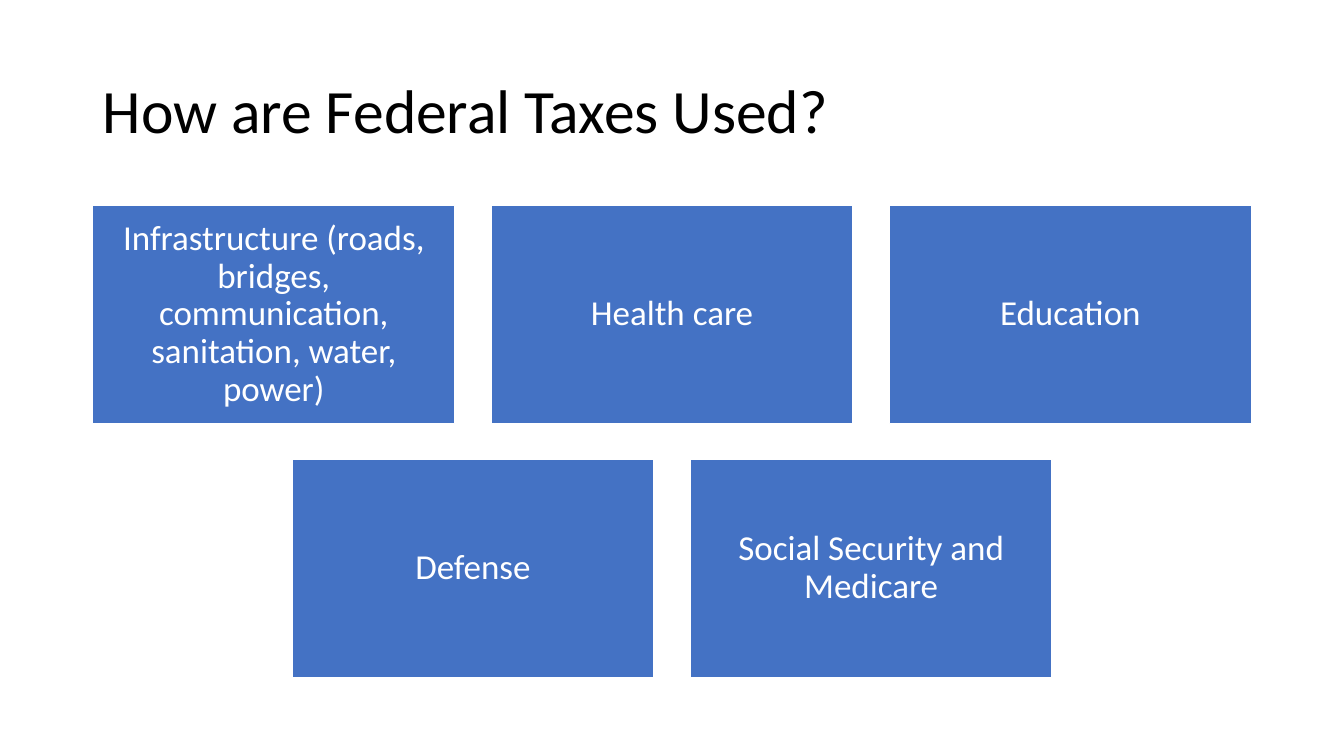
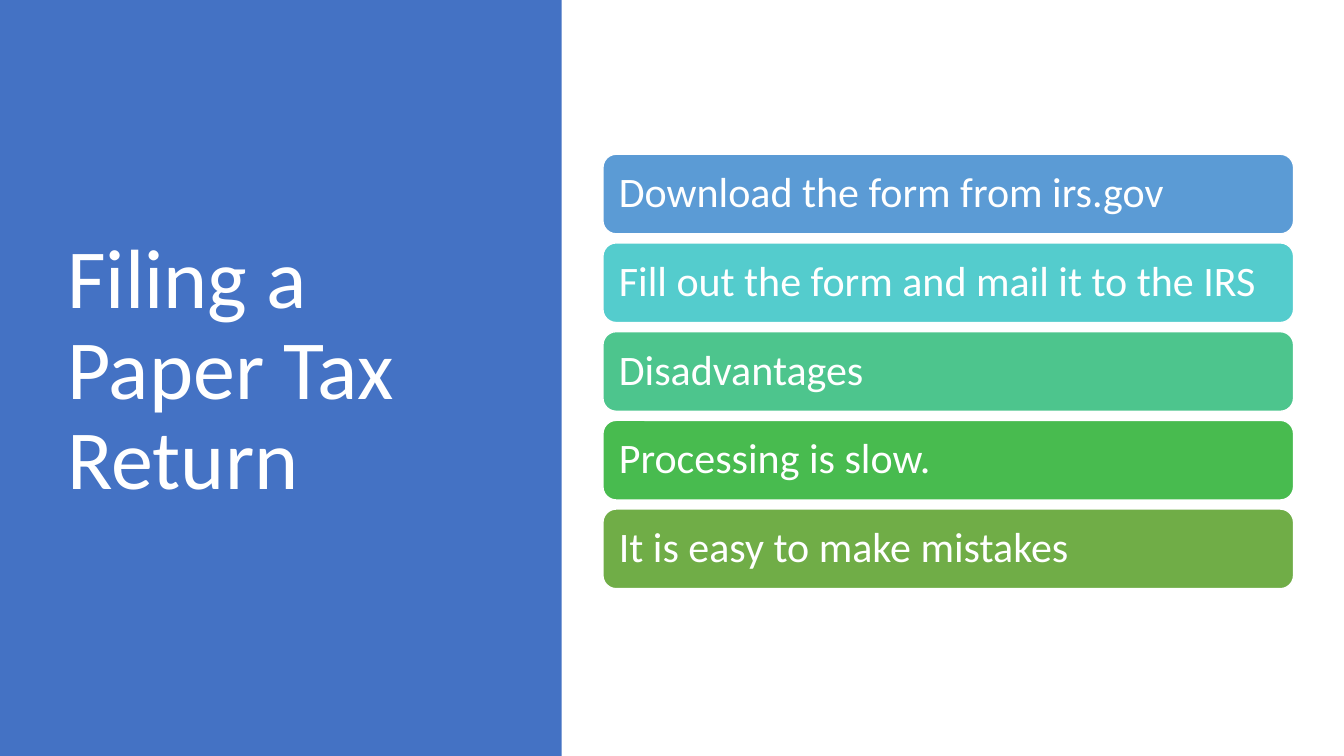
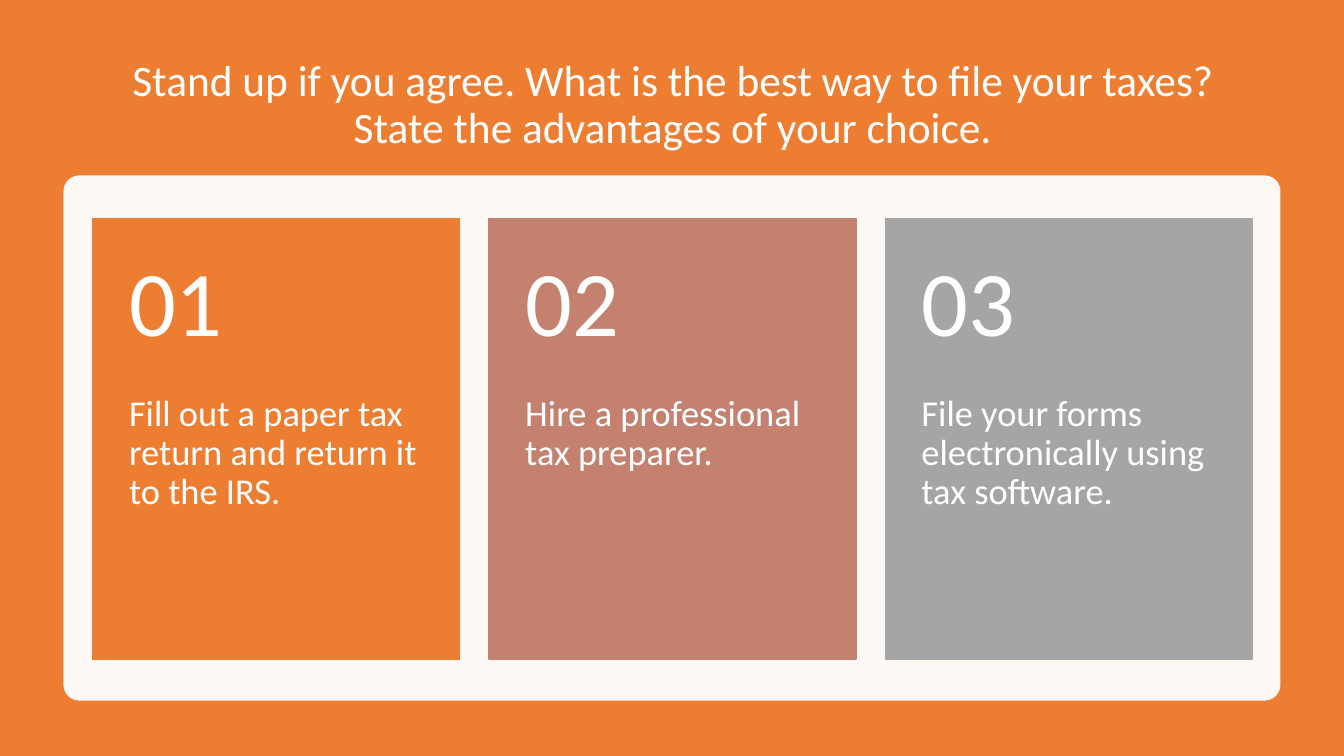
import pptx
import pptx.util
import pptx.dml.color
import pptx.enum.shapes
import pptx.enum.text
import pptx.oxml.ns
import lxml.etree

Inches = pptx.util.Inches
RGBColor = pptx.dml.color.RGBColor
SHAPE = pptx.enum.shapes.MSO_SHAPE
ALIGN = pptx.enum.text.PP_ALIGN
ANCHOR = pptx.enum.text.MSO_ANCHOR

WHITE = RGBColor(0xFF, 0xFF, 0xFF)
BLACK = RGBColor(0x00, 0x00, 0x00)
BLUE = RGBColor(0x44, 0x72, 0xC4)
SKY = RGBColor(0x5B, 0x9B, 0xD5)
TURQUOISE = RGBColor(0x54, 0xCC, 0xCD)
MINT = RGBColor(0x4D, 0xC5, 0x8D)
GREEN = RGBColor(0x48, 0xBB, 0x4F)
OLIVE = RGBColor(0x70, 0xAD, 0x47)
ORANGE = RGBColor(0xED, 0x7D, 0x31)
ROSE = RGBColor(0xC4, 0x81, 0x70)
GRAY = RGBColor(0xA5, 0xA5, 0xA5)

FONT = "Calibri"
WIDTH, HEIGHT = 13.33, 7.5
MARGIN = 0.92
CONTENT = 11.5


def add_panel(slide, kind, box, fill, outline=None):
    panel = slide.shapes.add_shape(kind, *[Inches(length) for length in box])
    panel.shadow.inherit = False
    panel.fill.solid()
    panel.fill.fore_color.rgb = fill
    if outline is None:
        panel.line.fill.background()
    else:
        panel.line.color.rgb = outline
        panel.line.width = pptx.util.Pt(1)
    return panel


def write(shape, text, size, color=WHITE, align=ALIGN.LEFT,
          anchor=ANCHOR.MIDDLE, insets=(0.1, 0.05, 0.1, 0.05)):
    frame = shape.text_frame
    frame.word_wrap = True
    frame.vertical_anchor = anchor
    (frame.margin_left, frame.margin_top,
     frame.margin_right, frame.margin_bottom) = [Inches(inset) for inset in insets]
    paragraph = frame.paragraphs[0]
    paragraph.alignment = align
    paragraph.line_spacing = 0.9
    run = paragraph.add_run()
    run.text = text
    run.font.name = FONT
    run.font.size = pptx.util.Pt(size)
    run.font.color.rgb = color


deck = pptx.Presentation()
deck.slide_width = Inches(WIDTH)
deck.slide_height = Inches(HEIGHT)
uses, filing, vote = [deck.slides.add_slide(deck.slide_layouts[6]) for _ in range(3)]

add_panel(filing, SHAPE.RECTANGLE, (0, 0, 5.57, HEIGHT), BLUE)
add_panel(vote, SHAPE.RECTANGLE, (0, 0, WIDTH, HEIGHT), ORANGE)

titles = [
    (uses, (MARGIN, 0.4, CONTENT, 1.45), "How are Federal Taxes Used?", 44, BLACK, ALIGN.LEFT),
    (filing, (0.57, 0.68, 4.16, 6.02), "Filing a Paper Tax Return", 60, WHITE, ALIGN.LEFT),
    (vote, (MARGIN, 0.5, CONTENT, 1.1),
     "Stand up if you agree. What is the best way to file your taxes? "
     "State the advantages of your choice.", 31, WHITE, ALIGN.CENTER),
]
for slide, box, text, size, color, align in titles:
    title = slide.shapes.add_textbox(*[Inches(length) for length in box])
    write(title, text, size, color, align)

use_rows = [
    ["Infrastructure (roads, bridges, communication, sanitation, water, power)",
     "Health care", "Education"],
    ["Defense", "Social Security and Medicare"],
]
use_width, use_height, use_gap = 3.59, 2.16, 0.36
for row, row_uses in enumerate(use_rows):
    row_width = len(row_uses) * (use_width + use_gap) - use_gap
    row_left = (WIDTH - row_width) / 2
    for column, use in enumerate(row_uses):
        left = row_left + column * (use_width + use_gap)
        top = 2.04 + row * (use_height + use_gap)
        tile = add_panel(uses, SHAPE.RECTANGLE, (left, top, use_width, use_height), BLUE, WHITE)
        write(tile, use, 25, align=ALIGN.CENTER, insets=(0.1, 0.1, 0.1, 0.1))

filing_steps = [
    ("Download the form from irs.gov", SKY),
    ("Fill out the form and mail it to the IRS", TURQUOISE),
    ("Disadvantages", MINT),
    ("Processing is slow.", GREEN),
    ("It is easy to make mistakes", OLIVE),
]
for row, (step, color) in enumerate(filing_steps):
    bar = add_panel(filing, SHAPE.ROUNDED_RECTANGLE,
                    (5.98, 1.53 + row * 0.88, 6.85, 0.79), color, WHITE)
    write(bar, step, 30, insets=(0.12, 0.12, 0.12, 0.12))

tray = add_panel(vote, SHAPE.ROUNDED_RECTANGLE, (0.63, 1.74, 12.07, 5.21), WHITE)
tray.adjustments[0] = 0.03
tray_color = tray.fill._xPr.find(".//" + pptx.oxml.ns.qn("a:srgbClr"))
lxml.etree.SubElement(tray_color, pptx.oxml.ns.qn("a:alpha"), val="95000")

choices = [
    ("Fill out a paper tax return and return it to the IRS.", ORANGE),
    ("Hire a professional tax preparer.", ROSE),
    ("File your forms electronically using tax software.", GRAY),
]
card_width, card_height, card_top, card_gap = 3.64, 4.37, 2.17, 0.29
number_height = card_height * 0.4
for column, (choice, color) in enumerate(choices):
    left = MARGIN + column * (card_width + card_gap)
    card = add_panel(vote, SHAPE.RECTANGLE, (left, card_top, card_width, card_height), color, color)
    write(card, choice, 26, anchor=ANCHOR.TOP, insets=(0.36, number_height, 0.36, 0.36))
    number = vote.shapes.add_textbox(Inches(left), Inches(card_top),
                                     Inches(card_width), Inches(number_height))
    write(number, f"{column + 1:02d}", 66, insets=(0.36, 0.18, 0.36, 0.18))

deck.save("out.pptx")
